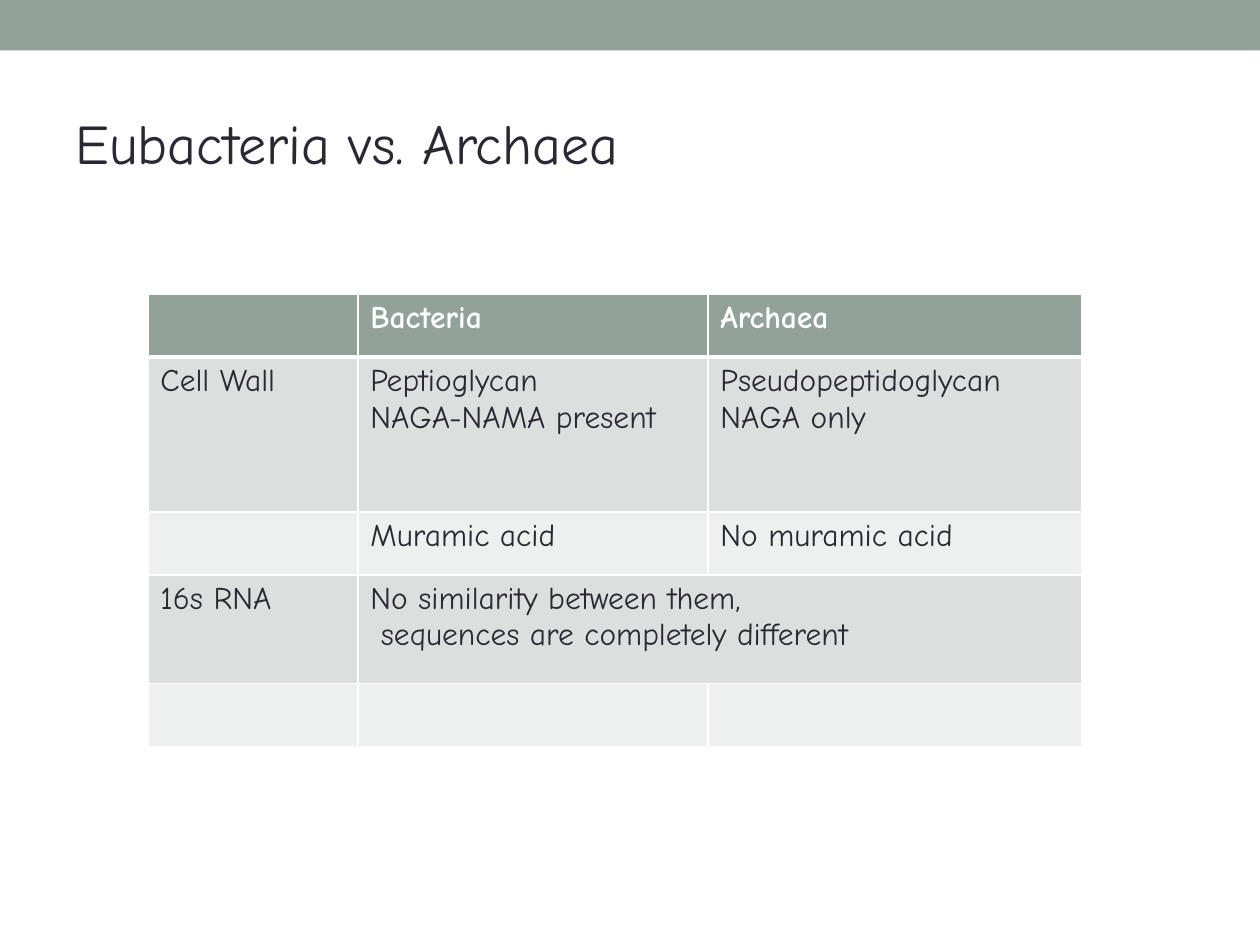
import dataclasses

import lxml.etree
import pptx
import pptx.dml.color
import pptx.enum.shapes
import pptx.enum.text
import pptx.oxml.ns
import pptx.util

Pt = pptx.util.Pt
RGB = pptx.dml.color.RGBColor.from_string
qn = pptx.oxml.ns.qn


@dataclasses.dataclass(frozen=True)
class Theme:
    font: str = "Comic Neue"
    accent: str = "93A299"
    ink: str = "292934"
    white: str = "FFFFFF"
    bands: tuple = ("DBDFDD", "EEF0EF")
    title_size: int = 32
    body_size: int = 18
    rule: int = 1
    header_rule: int = 3


class Deck:
    def __init__(self, theme, width, height):
        self.theme = theme
        self.prs = pptx.Presentation()
        self.prs.slide_width, self.prs.slide_height = Pt(width), Pt(height)
        self.s = self.prs.slides.add_slide(self.prs.slide_layouts[6])

    def add_text(self, tf, text, size, color, bold=False):
        fmt = {"name": self.theme.font, "size": Pt(size), "bold": bold}
        for i, line in enumerate(text.split("\n")):
            p = tf.add_paragraph() if i else tf.paragraphs[0]
            r = p.add_run()
            r.text = line
            for key, value in fmt.items():
                setattr(r.font, key, value)
            r.font.color.rgb = RGB(color)

    def bar(self, x, y, w, h):
        sp = self.s.shapes.add_shape(
            pptx.enum.shapes.MSO_SHAPE.RECTANGLE, Pt(x), Pt(y), Pt(w), Pt(h))
        sp.shadow.inherit = False
        sp.fill.solid()
        sp.fill.fore_color.rgb = RGB(self.theme.accent)
        sp.line.fill.background()

    def title(self, text, x, y, w, h):
        tf = self.s.shapes.add_textbox(Pt(x), Pt(y), Pt(w), Pt(h)).text_frame
        fmt = {"word_wrap": True,
               "vertical_anchor": pptx.enum.text.MSO_ANCHOR.MIDDLE}
        for key, value in fmt.items():
            setattr(tf, key, value)
        self.add_text(tf, text, self.theme.title_size, self.theme.ink)

    def borders(self, cell, top, bottom):
        tc_pr = cell._tc.get_or_add_tcPr()
        widths = {"a:lnL": self.theme.rule, "a:lnR": self.theme.rule,
                  "a:lnT": top, "a:lnB": bottom}
        for i, (tag, width) in enumerate(widths.items()):
            ln = lxml.etree.Element(qn(tag), w=str(Pt(width)))
            fill = lxml.etree.SubElement(ln, qn("a:solidFill"))
            lxml.etree.SubElement(fill, qn("a:srgbClr"), val=self.theme.white)
            tc_pr.insert(i, ln)

    def table(self, x, y, cols, heights, rows, merges):
        t = self.theme
        table = self.s.shapes.add_table(
            len(heights), len(cols), Pt(x), Pt(y),
            Pt(sum(cols)), Pt(sum(heights))).table
        for col, width in zip(table.columns, cols):
            col.width = Pt(width)
        for row, height in zip(table.rows, heights):
            row.height = Pt(height)
        for i, texts in enumerate(rows):
            header = i == 0
            top = t.header_rule if i == 1 else t.rule
            bottom = t.header_rule if header else t.rule
            for j, text in enumerate(texts):
                cell = table.cell(i, j)
                cell.fill.solid()
                cell.fill.fore_color.rgb = RGB(
                    t.accent if header else t.bands[(i - 1) % 2])
                self.borders(cell, top, bottom)
                if text:
                    self.add_text(cell.text_frame, text, t.body_size,
                                  t.white if header else t.ink, header)
        for first, last in merges:
            table.cell(*first).merge(table.cell(*last))


def main():
    deck = Deck(Theme(), 720, 540)
    deck.bar(0, 0, 720, 28.8)
    deck.title("Eubacteria vs. Archaea", 36, 42, 648, 78)
    deck.table(
        84.5, 168, [120, 200, 213.5], [36, 88.5, 36, 62, 36],
        [["", "Bacteria", "Archaea"],
         ["Cell Wall", "Peptioglycan\nNAGA-NAMA present",
          "Pseudopeptidoglycan\nNAGA only"],
         ["", "Muramic acid", "No muramic acid"],
         ["16s RNA", "No similarity between them,\n"
          " sequences are completely different", ""],
         ["", "", ""]],
        [((3, 1), (3, 2))])
    deck.prs.save("out.pptx")


if __name__ == "__main__":
    main()
